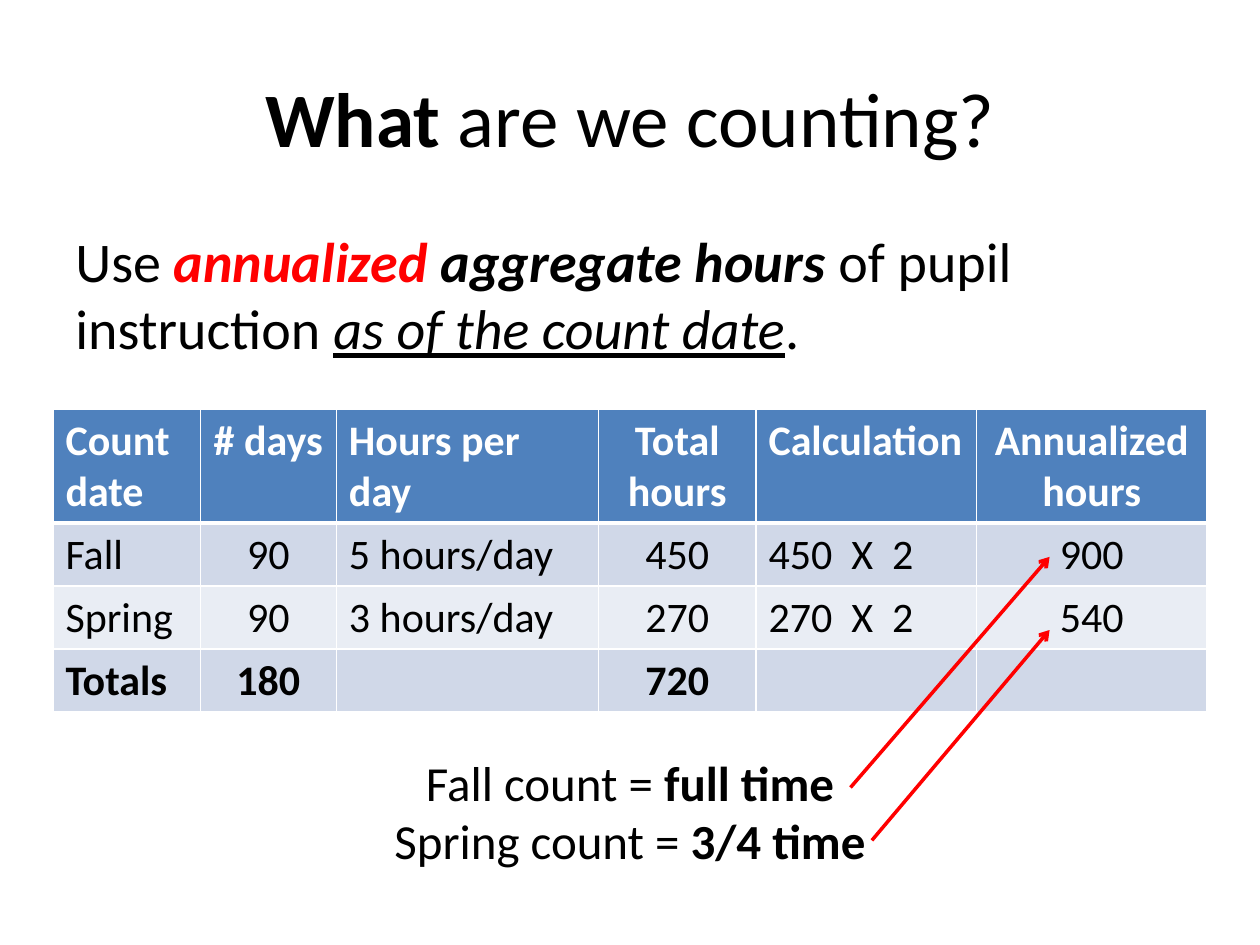
from dataclasses import dataclass

from lxml import etree
from pptx import Presentation
from pptx.dml.color import RGBColor
from pptx.enum.shapes import MSO_CONNECTOR
from pptx.enum.text import MSO_ANCHOR, PP_ALIGN
from pptx.oxml import parse_xml
from pptx.util import Inches, Pt

LEFT, CENTER = PP_ALIGN.LEFT, PP_ALIGN.CENTER
TOP, MIDDLE = MSO_ANCHOR.TOP, MSO_ANCHOR.MIDDLE
STRAIGHT = MSO_CONNECTOR.STRAIGHT
NS = "http://schemas.openxmlformats.org/drawingml/2006/main"


@dataclass(frozen=True)
class Theme:
    font: str = "Calibri"
    black: str = "000000"
    white: str = "FFFFFF"
    red: str = "FF0000"
    header: str = "4F81BD"
    band: str = "D0D8E8"
    light: str = "E9EDF4"
    title: int = 44
    body: int = 32
    note: int = 28
    table: int = 24


theme = Theme()


def add_run(p, text, size, color=theme.black, bold=False, italic=False, underline=False):
    r = p.add_run()
    r.text = text
    r.font.name = theme.font
    r.font.size = Pt(size)
    r.font.color.rgb = RGBColor.from_string(color)
    r.font.bold = bold
    r.font.italic = italic
    r.font.underline = underline


prs = Presentation()
prs.slide_width, prs.slide_height = Inches(10), Inches(7.5)
s = prs.slides.add_slide(prs.slide_layouts[6])

bold = {"bold": True}
text_boxes = [
    ((0.5, 0.3, 9, 1.25), theme.title, CENTER, MIDDLE,
     [[("What", bold), (" are we counting?", {})]]),
    ((0.5, 1.75, 9, 1.33), theme.body, LEFT, TOP,
     [[("Use ", {}),
       ("annualized", {"bold": True, "italic": True, "color": theme.red}),
       (" aggregate hours ", {"bold": True, "italic": True}),
       ("of pupil instruction ", {}),
       ("as of the count date", {"italic": True, "underline": True}),
       (".", {})]]),
    ((2.75, 5.92, 4.5, 1.04), theme.note, CENTER, TOP,
     [[("Fall count = ", {}), ("full time", bold)],
      [("Spring count = ", {}), ("3/4 time", bold)]]),
]
for box, size, align, anchor, paragraphs in text_boxes:
    tf = s.shapes.add_textbox(*map(Inches, box)).text_frame
    tf.word_wrap = True
    tf.vertical_anchor = anchor
    for i, runs in enumerate(paragraphs):
        p = tf.add_paragraph() if i else tf.paragraphs[0]
        p.alignment = align
        for text, style in runs:
            add_run(p, text, size, **style)

rows = [
    ["Count date", "# days", "Hours per day", "Total hours", "Calculation", "Annualized hours"],
    ["Fall", "90", "5 hours/day", "450", "450  X  2", "900"],
    ["Spring", "90", "3 hours/day", "270", "270  X  2", "540"],
    ["Totals", "180", "", "720", "", ""],
]
col_widths = [1.17, 1.08, 2.08, 1.25, 1.75, 1.83]
row_heights = [0.9, 0.5, 0.5, 0.5]
row_fills = [theme.header, theme.band, theme.light, theme.band]
last = len(rows) - 1

table = s.shapes.add_table(len(rows), len(col_widths), Inches(0.42), Inches(3.25),
                           Inches(sum(col_widths)), Inches(sum(row_heights))).table
for col, width in zip(table.columns, col_widths):
    col.width = Inches(width)
for i, row in enumerate(rows):
    table.rows[i].height = Inches(row_heights[i])
    for j, text in enumerate(row):
        cell = table.cell(i, j)
        cell.fill.solid()
        cell.fill.fore_color.rgb = RGBColor.from_string(row_fills[i])
        p = cell.text_frame.paragraphs[0]
        p.alignment = CENTER if j % 2 else LEFT
        p.font.size = Pt(theme.table)
        if text:
            add_run(p, text, theme.table, color=theme.black if i else theme.white,
                    bold=i in (0, last))
        tc_pr = cell._tc.get_or_add_tcPr()
        for k, side in enumerate("LRTB"):
            heavy = (i, side) in ((0, "B"), (1, "T"))
            tc_pr.insert(k, parse_xml(
                f'<a:ln{side} xmlns:a="{NS}" w="{Pt(3 if heavy else 1)}"><a:solidFill>'
                f'<a:srgbClr val="{theme.white}"/></a:solidFill></a:ln{side}>'))

for ends in [(6.75, 6.25, 8.33, 4.42), (6.92, 6.67, 8.33, 5)]:
    arrow = s.shapes.add_connector(STRAIGHT, *map(Inches, ends))
    arrow.line.color.rgb = RGBColor.from_string(theme.red)
    arrow.line.width = Pt(2)
    etree.SubElement(arrow.line._get_or_add_ln(), f"{{{NS}}}tailEnd", type="arrow")
    etree.SubElement(arrow._element.spPr, f"{{{NS}}}effectLst")

prs.save("out.pptx")
